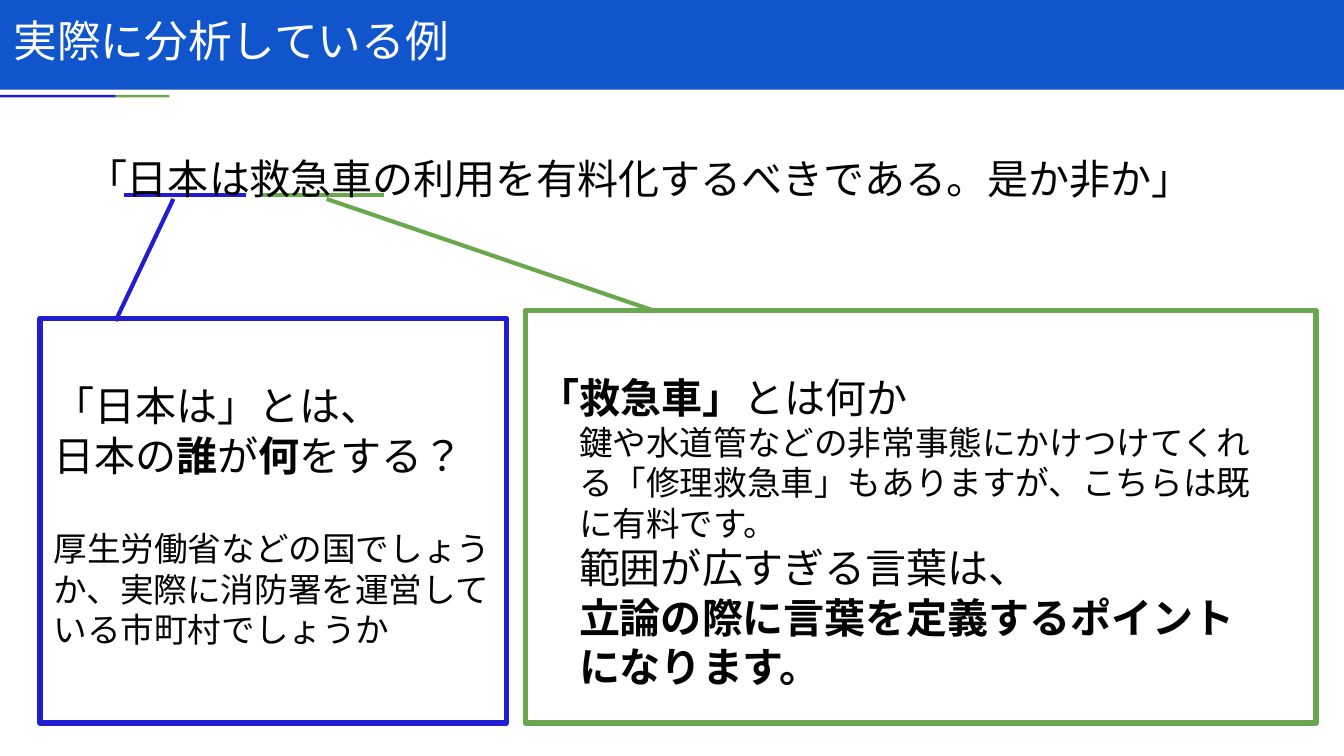
from lxml import etree
from pptx import Presentation
from pptx.dml.color import RGBColor
from pptx.enum.lang import MSO_LANGUAGE_ID
from pptx.enum.shapes import MSO_CONNECTOR, MSO_SHAPE
from pptx.enum.text import MSO_ANCHOR, MSO_AUTO_SIZE, PP_ALIGN
from pptx.oxml.ns import qn
from pptx.util import Pt

RECTANGLE = MSO_SHAPE.RECTANGLE
STRAIGHT = MSO_CONNECTOR.STRAIGHT
TOP, MIDDLE = MSO_ANCHOR.TOP, MSO_ANCHOR.MIDDLE
LEFT = PP_ALIGN.LEFT
NO_AUTOFIT = MSO_AUTO_SIZE.NONE
JAPANESE = MSO_LANGUAGE_ID.JAPANESE

FONT = "Noto Sans CJK JP"
COLORS = {"header": "1155CC", "blue": "211DD1", "green": "6AA84F",
          "text": "030303", "title": "FFFFFF"}
INSET = 7.2
INDENT = 21.6
LARGE, SMALL = 22, 18
LARGE_LINE = 26.2


def rgb(name):
    return RGBColor.from_string(COLORS[name])


def add_bar(slide, left, top, width, height, color):
    bar = slide.shapes.add_shape(RECTANGLE, Pt(left), Pt(top), Pt(width), Pt(height))
    bar.shadow.inherit = False
    bar.fill.solid()
    bar.fill.fore_color.rgb = rgb(color)
    bar.line.fill.background()


def add_line(slide, start, end, color):
    line = slide.shapes.add_connector(STRAIGHT, *map(Pt, start + end))
    line.line.color.rgb = rgb(color)
    line.line.width = Pt(2.25)
    etree.SubElement(line._element.spPr, qn("a:effectLst"))


def setup_frame(frame, anchor, top_inset=INSET, right_inset=INSET):
    frame.word_wrap = True
    frame.auto_size = NO_AUTOFIT
    frame.vertical_anchor = anchor
    frame.margin_left = frame.margin_bottom = Pt(INSET)
    frame.margin_top = Pt(top_inset)
    frame.margin_right = Pt(right_inset)


def write_paragraph(paragraph, runs, size, color="text", indent=0, after=0):
    paragraph.alignment = LEFT
    paragraph.space_before = Pt(0)
    paragraph.space_after = Pt(after)
    paragraph.font.name = FONT
    paragraph.font.size = Pt(size)
    paragraph.font.color.rgb = rgb(color)
    properties = paragraph._p.get_or_add_pPr()
    properties.set("marL", str(Pt(indent)))
    properties.set("indent", "0")
    properties.insert_element_before(
        etree.Element(qn("a:buNone")), "a:tabLst", "a:defRPr", "a:extLst")
    for text, bold in runs:
        run = paragraph.add_run()
        run.text = text
        run.font.language_id = JAPANESE
        if bold:
            run.font.bold = True


def fill_placeholder(slide, placeholder, box, text, size, color, anchor):
    placeholder.left, placeholder.top, placeholder.width, placeholder.height = map(Pt, box)
    slide.shapes._spTree.append(placeholder._element)
    setup_frame(placeholder.text_frame, anchor)
    paragraph = placeholder.text_frame.paragraphs[0]
    write_paragraph(paragraph, [(text, False)], size, color)
    return paragraph


def add_note_box(slide, box, color, paragraphs, right_inset=INSET):
    note = slide.shapes.add_shape(RECTANGLE, *map(Pt, box))
    note.shadow.inherit = False
    note.fill.background()
    note.line.color.rgb = rgb(color)
    note.line.width = Pt(3)
    frame = note.text_frame
    setup_frame(frame, TOP, INSET + LARGE_LINE, right_inset)
    for number, (runs, size, indent, after) in enumerate(paragraphs):
        paragraph = frame.add_paragraph() if number else frame.paragraphs[0]
        write_paragraph(paragraph, runs, size, indent=indent, after=after)


def add_callout(slide, underline_left, pointer_start, pointer_end, color):
    underline_y = 104.6
    add_line(slide, (underline_left, underline_y), (underline_left + 65.5, underline_y), color)
    add_line(slide, pointer_start, pointer_end, color)


def main():
    prs = Presentation()
    prs.slide_width, prs.slide_height = Pt(720), Pt(405)
    slide = prs.slides.add_slide(prs.slide_layouts[1])
    title, motion = slide.placeholders

    add_bar(slide, -0.7, -1.4, 723.6, 49.4, "header")
    add_bar(slide, 62, 50.8, 28.8, 1.4, "green")
    add_bar(slide, 0, 50.8, 62, 1.4, "blue")
    fill_placeholder(slide, title, (0, 0, 605.5, 42.5),
                     "実際に分析している例", 23.4, "title", MIDDLE)

    add_callout(slide, 66.2, (92.9, 106.6), (61.9, 172), "blue")
    add_note_box(slide, (21.6, 170.6, 249.8, 216.7), "blue", [
        ([("「日本は」とは、", False)], LARGE, 0, 0),
        ([("日本の", False), ("誰", True), ("が", False), ("何", True),
          ("をする？", False)], LARGE, 0, LARGE_LINE),
        ([("厚生労働省などの国でしょうか、実際に消防署を運営している市町村でしょうか", False)],
         SMALL, 0, 0),
    ])

    add_callout(slide, 140.4, (175, 106.6), (349.9, 166.3), "green")
    add_note_box(slide, (281.5, 166.3, 423.4, 221), "green", [
        ([("「救急車」", True), ("とは何か", False)], LARGE, 0, 0),
        ([("鍵や水道管などの非常事態にかけつけてくれる「修理救急車」もありますが、"
           "こちらは既に有料です。", False)], SMALL, INDENT, 0),
        ([("範囲が広すぎる言葉は、", False)], LARGE, INDENT, 0),
        ([("立論の際に言葉を定義するポイントになります。", True)], LARGE, INDENT, 0),
    ], INSET + INDENT)

    statement = fill_placeholder(
        slide, motion, (38.9, 71.3, 656.6, 42.5),
        "「日本は救急車の利用を有料化するべきである。是か非か」", LARGE, "text", TOP)
    statement.line_spacing = 1.15
    statement.space_after = Pt(12)

    prs.save("out.pptx")


if __name__ == "__main__":
    main()
